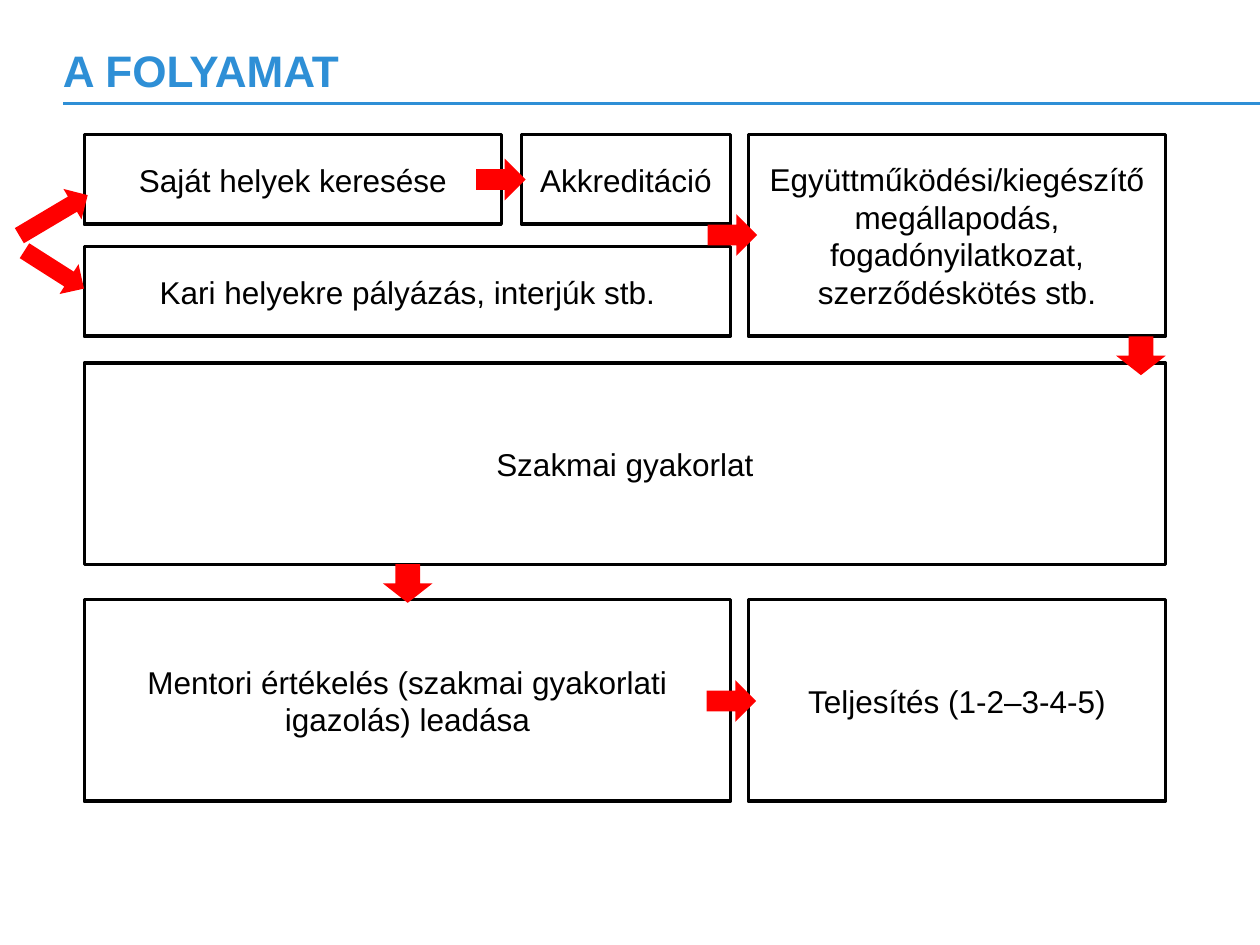
from lxml import etree
from pptx import Presentation
from pptx.dml.color import RGBColor
from pptx.enum.shapes import MSO_CONNECTOR, MSO_SHAPE
from pptx.enum.text import MSO_ANCHOR, PP_ALIGN
from pptx.oxml.ns import qn
from pptx.util import Pt

RECTANGLE = MSO_SHAPE.RECTANGLE
RIGHT, DOWN = MSO_SHAPE.RIGHT_ARROW, MSO_SHAPE.DOWN_ARROW
STRAIGHT = MSO_CONNECTOR.STRAIGHT
MIDDLE = MSO_ANCHOR.MIDDLE
CENTER, LEFT = PP_ALIGN.CENTER, PP_ALIGN.LEFT

THEME = {
    "font": "Arial",
    "title_size": 25.2, "body_size": 18,
    "accent": RGBColor(0x2E, 0x8F, 0xD6),
    "ink": RGBColor(0, 0, 0),
    "paper": RGBColor(0xFF, 0xFF, 0xFF),
    "arrow": RGBColor(0xFF, 0, 0),
}

# Content
SLIDE_WIDTH, SLIDE_HEIGHT = 720, 540
TITLE = "A FOLYAMAT"

# Column edges and row (top, height)
COLUMN_LEFT = (48.2, 298, 427.7)
COLUMN_RIGHT = (286.5, 417.4, 666)
SHORT, TALL = 51.2, 115.2
ROWS = {"search": (77, SHORT), "apply": (141, SHORT), "agree": (77, TALL),
        "practice": (207.4, TALL), "finish": (342.7, TALL)}

# Text, row, first column, last column
STEPS = [
    ("Saját helyek keresése", "search", 0, 0),
    ("Kari helyekre pályázás, interjúk stb.", "apply", 0, 1),
    ("Akkreditáció", "search", 1, 1),
    ("Együttműködési/kiegészítő megállapodás, fogadónyilatkozat, szerződéskötés stb.",
     "agree", 2, 2),
    ("Szakmai gyakorlat", "practice", 0, 2),
    ("Mentori értékelés (szakmai gyakorlati igazolás) leadása", "finish", 0, 1),
    ("Teljesítés (1-2–3-4-5)", "finish", 2, 2),
]

# Kind, centre, size, rotation
RIGHT_SIZE, DOWN_SIZE = (28.3, 23.8), (28.3, 22.2)
ARROWS = [
    (RIGHT, (31, 154.1), (40.3, 20.2), 32.5),
    (RIGHT, (418, 400.6), RIGHT_SIZE, 0),
    (RIGHT, (286.2, 102.6), RIGHT_SIZE, 0),
    (RIGHT, (418.5, 134.3), RIGHT_SIZE, 0),
    (RIGHT, (30.6, 123.1), (45.4, 20.2), 329.3),
    (DOWN, (652, 203.3), DOWN_SIZE, 0),
    (DOWN, (233, 333.4), DOWN_SIZE, 0),
]


def write(shape, text, size, color, alignment, bold=False):
    frame = shape.text_frame
    frame.word_wrap = True
    frame.vertical_anchor = MIDDLE
    paragraph = frame.paragraphs[0]
    paragraph.alignment = alignment
    run = paragraph.add_run()
    run.text = text
    run.font.name = THEME["font"]
    run.font.size = Pt(size)
    run.font.bold = bold
    run.font.color.rgb = color


def add_filled(slide, kind, left, top, width, height, fill):
    shape = slide.shapes.add_shape(kind, Pt(left), Pt(top), Pt(width), Pt(height))
    shape.shadow.inherit = False
    shape.fill.solid()
    shape.fill.fore_color.rgb = fill
    return shape


def add_title(slide):
    rule = slide.shapes.add_connector(STRAIGHT, Pt(36), Pt(59), Pt(SLIDE_WIDTH), Pt(59))
    rule.line.color.rgb = THEME["accent"]
    rule.line.width = Pt(1.5)
    etree.SubElement(rule._element.spPr, qn("a:effectLst"))
    box = slide.shapes.add_textbox(Pt(36), Pt(28.8), Pt(648), Pt(22.3))
    frame = box.text_frame
    frame.margin_left = frame.margin_right = frame.margin_top = frame.margin_bottom = 0
    write(box, TITLE, THEME["title_size"], THEME["accent"], LEFT, bold=True)


def add_step(slide, text, row, first, last):
    top, height = ROWS[row]
    left = COLUMN_LEFT[first]
    box = add_filled(slide, RECTANGLE, left, top, COLUMN_RIGHT[last] - left, height,
                     THEME["paper"])
    box.line.color.rgb = THEME["ink"]
    box.line.width = Pt(2)
    write(box, text, THEME["body_size"], THEME["ink"], CENTER)


def add_arrow(slide, kind, center, size, rotation):
    (x, y), (width, height) = center, size
    arrow = add_filled(slide, kind, x - width / 2, y - height / 2, width, height,
                       THEME["arrow"])
    arrow.line.fill.background()
    arrow.rotation = rotation


def main():
    presentation = Presentation()
    presentation.slide_width = Pt(SLIDE_WIDTH)
    presentation.slide_height = Pt(SLIDE_HEIGHT)
    slide = presentation.slides.add_slide(presentation.slide_layouts[6])

    # Heading, process steps, then the arrows on top
    add_title(slide)
    for step in STEPS:
        add_step(slide, *step)
    for arrow in ARROWS:
        add_arrow(slide, *arrow)

    presentation.save("out.pptx")


if __name__ == "__main__":
    main()
